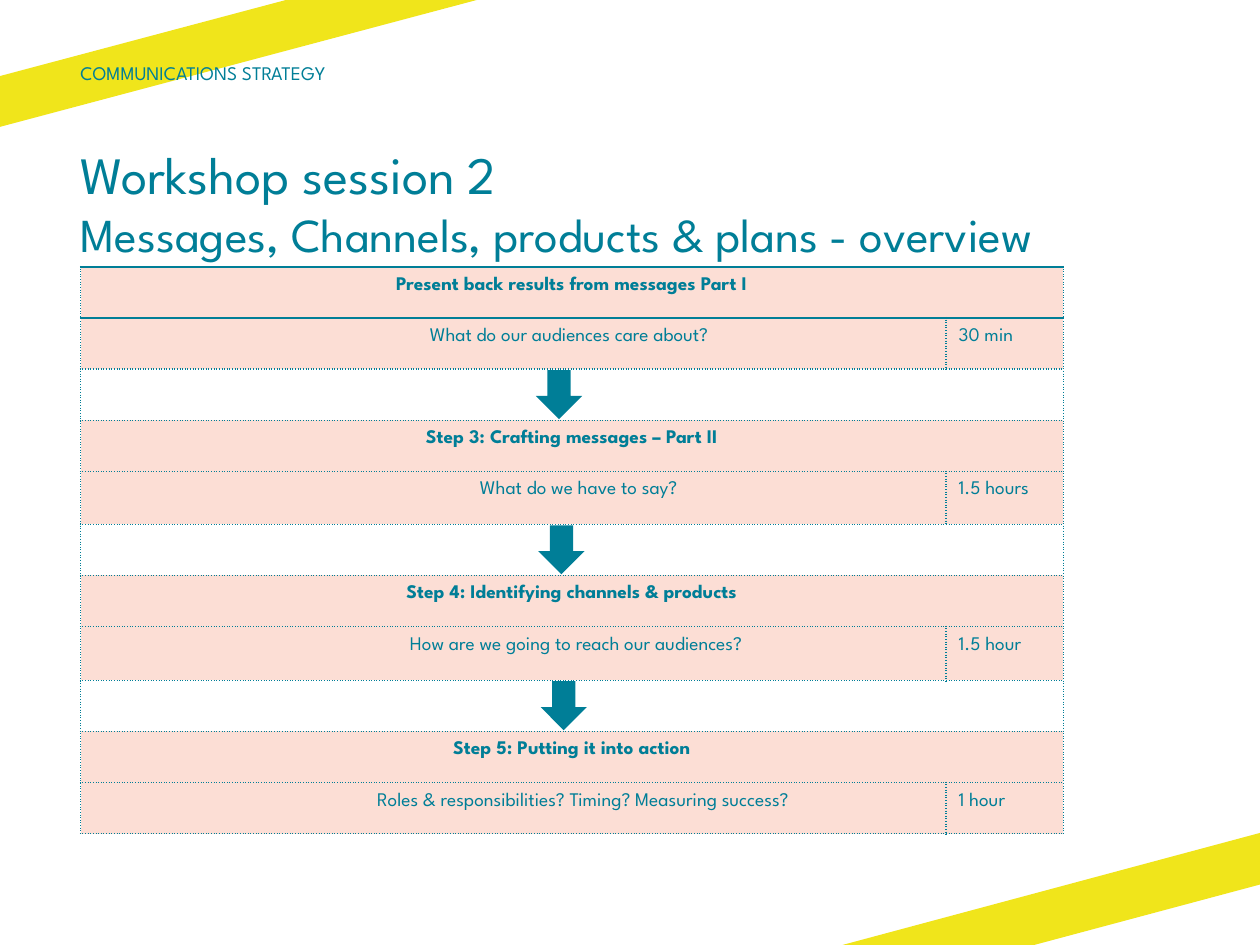
from lxml import etree
from pptx import Presentation
from pptx.dml.color import RGBColor
from pptx.enum.shapes import MSO_SHAPE
from pptx.enum.text import MSO_ANCHOR, PP_ALIGN
from pptx.oxml.ns import qn
from pptx.util import Pt

TOP, MIDDLE = MSO_ANCHOR.TOP, MSO_ANCHOR.MIDDLE
LEFT, CENTER = PP_ALIGN.LEFT, PP_ALIGN.CENTER
DOWN_ARROW = MSO_SHAPE.DOWN_ARROW

FONT = "League Spartan"
COLORS = {"teal": "007E97", "yellow": "F0E51B", "peach": "FCDED5", "white": "FFFFFF"}
WIDTH, HEIGHT = 720, 540

SECTION = "COMMUNICATIONS STRATEGY"
TITLE = [("Workshop session 2", 30),
         ("Messages, Channels, products & plans - overview", 27)]
# heading, question, question indent, duration, question row height
STEPS = [
    ("Present back results from messages Part I",
     "What do our audiences care about?", 64, "30 min", 29.2),
    ("Step 3: Crafting messages – Part II",
     "What do we have to say?", 75, "1.5 hours", 30.3),
    ("Step 4: Identifying channels & products",
     "How are we going to reach our audiences?", 72, "1.5 hour", 30.7),
    ("Step 5: Putting it into action",
     "Roles & responsibilities? Timing? Measuring success?", 80, "1 hour", 29.2),
]
BANDS = [
    [(163.5, 0), (0, 43.5), (0, 72.5), (272.5, 0)],
    [(481.5, HEIGHT), (591, HEIGHT), (WIDTH, 505.5), (WIDTH, 476)],
]
MARGIN_X = 46
TABLE_TOP = 152.6
COLUMNS = [494.6, 67]
ROW_H = 29.2
PAD_X, PAD_Y = 7.2, 5.76
ARROW_W, ARROW_H = 26.5, 28
ARROW_X, ARROW_DRIFT = 306.2, 1.35


def rgb(name):
    return RGBColor.from_string(COLORS[name])


def paint(sp, color):
    sp.shadow.inherit = False
    sp.fill.solid()
    sp.fill.fore_color.rgb = rgb(color)
    sp.line.fill.background()


def write(p, text, size=11, bold=False, align=LEFT):
    p.alignment = align
    r = p.add_run()
    r.text = text
    r.font.name = FONT
    r.font.size = Pt(size)
    r.font.bold = bold
    r.font.color.rgb = rgb("teal")


def add_text_box(slide, x, y, w, h, lines, anchor=TOP):
    tf = slide.shapes.add_textbox(Pt(x), Pt(y), Pt(w), Pt(h)).text_frame
    tf.word_wrap = True
    tf.vertical_anchor = anchor
    tf.margin_left = tf.margin_right = tf.margin_top = tf.margin_bottom = 0
    for i, (text, size) in enumerate(lines):
        p = tf.add_paragraph() if i else tf.paragraphs[0]
        write(p, text, size=size)


def set_borders(cell, heavy):
    """Draw the four cell edges: solid where listed in heavy, dotted elsewhere."""
    tc_pr = cell._tc.get_or_add_tcPr()
    for i, side in enumerate("LRTB"):
        solid = side in heavy
        ln = etree.Element(qn("a:ln" + side), w=str(Pt(1.5 if solid else 1)))
        fill = etree.SubElement(ln, qn("a:solidFill"))
        etree.SubElement(fill, qn("a:srgbClr"), val=COLORS["teal"])
        etree.SubElement(ln, qn("a:prstDash"), val="solid" if solid else "sysDot")
        tc_pr.insert(i, ln)


def format_cell(cell, color, heavy="", pad=(PAD_X, PAD_Y), indent=0):
    cell.fill.solid()
    cell.fill.fore_color.rgb = rgb(color)
    cell.margin_left = Pt(pad[0] + indent)
    cell.margin_right = Pt(pad[0])
    cell.margin_top = cell.margin_bottom = Pt(pad[1])
    set_borders(cell, heavy)


def add_agenda(slide):
    """Build the table and return the top of each gap between steps."""
    heights = []
    for *_, question_h in STEPS:
        heights += [ROW_H, question_h, ROW_H]
    heights.pop()
    table = slide.shapes.add_table(
        len(heights), len(COLUMNS), Pt(MARGIN_X), Pt(TABLE_TOP),
        Pt(sum(COLUMNS)), Pt(sum(heights))).table
    table.first_row = table.horz_banding = False
    for col, w in zip(table.columns, COLUMNS):
        col.width = Pt(w)
    for row, h in zip(table.rows, heights):
        row.height = Pt(h)

    gaps = []
    for i, (heading, question, indent, duration, _) in enumerate(STEPS):
        top = 3 * i
        merged = [(top, "peach", "" if i else "TB")]
        if i < len(STEPS) - 1:
            merged.append((top + 2, "white", ""))
            gaps.append(TABLE_TOP + sum(heights[:top + 2]))
        for row, color, heavy in merged:
            pad = (PAD_X, PAD_Y) if color == "peach" else (0, 0)
            format_cell(table.cell(row, 0), color, heavy, pad)
            format_cell(table.cell(row, 1), color, heavy, (0, 0))
            table.cell(row, 0).merge(table.cell(row, 1))
        title, left, right = (table.cell(top, 0), table.cell(top + 1, 0),
                              table.cell(top + 1, 1))
        heavy = "" if i else "T"
        format_cell(left, "peach", heavy, indent=indent)
        format_cell(right, "peach", heavy)
        write(title.text_frame.paragraphs[0], heading, bold=True, align=CENTER)
        write(left.text_frame.paragraphs[0], question, align=CENTER)
        write(right.text_frame.paragraphs[0], duration)
    return gaps


def main():
    prs = Presentation()
    prs.slide_width, prs.slide_height = Pt(WIDTH), Pt(HEIGHT)
    slide = prs.slides.add_slide(prs.slide_layouts[6])

    for start, *rest in BANDS:
        builder = slide.shapes.build_freeform(Pt(start[0]), Pt(start[1]))
        builder.add_line_segments([(Pt(x), Pt(y)) for x, y in rest], close=True)
        paint(builder.convert_to_shape(), "yellow")

    add_text_box(slide, MARGIN_X, 81.4, 628.6, 73.4, TITLE)
    gaps = add_agenda(slide)
    add_text_box(slide, MARGIN_X, 31, 329, 20.9, [(SECTION, 11)], anchor=MIDDLE)
    for i, y in enumerate(gaps):
        arrow = slide.shapes.add_shape(
            DOWN_ARROW, Pt(ARROW_X + i * ARROW_DRIFT), Pt(y + 0.5),
            Pt(ARROW_W), Pt(ARROW_H))
        paint(arrow, "teal")

    prs.save("out.pptx")


if __name__ == "__main__":
    main()
